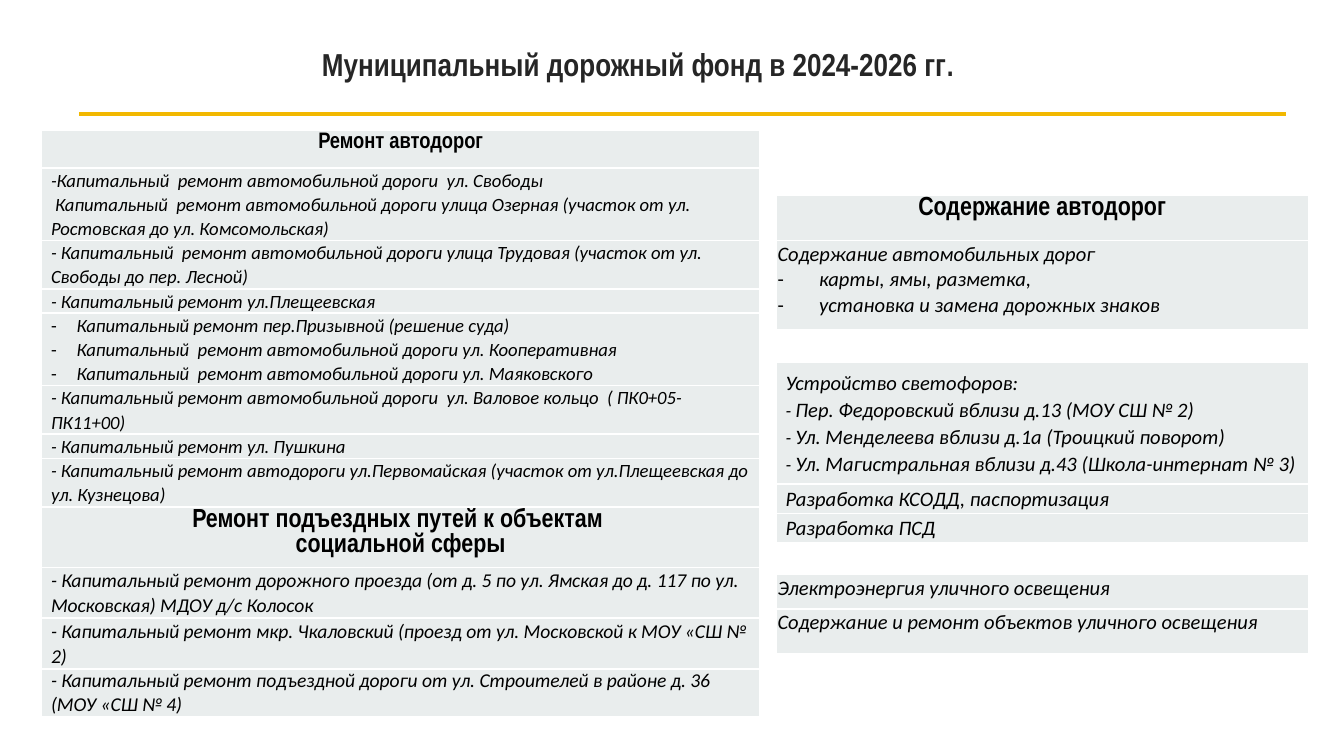
from dataclasses import dataclass

from lxml.etree import SubElement
from pptx import Presentation
from pptx.dml.color import RGBColor
from pptx.enum.shapes import MSO_CONNECTOR as Connector
from pptx.enum.text import MSO_ANCHOR as Anchor, MSO_AUTO_SIZE as AutoSize, PP_ALIGN as Align
from pptx.oxml.ns import qn
from pptx.util import Inches, Pt

WIDTH = 10
HEIGHT = WIDTH * 9 / 16
COLORS = {"title": "262626", "text": "000000", "rule": "F2B800",
          "cell": "E9EDED", "border": "FFFFFF"}
HEADING_FONT, LIST_FONT = "Arial Narrow", "Calibri"
TIGHT, WIDE = (0.01, 0.01, 0.01, 0), (0.07, 0, 0.07, 0)
LEFT_COLUMN, RIGHT_COLUMN = (3.1, 53.45), (57.75, 39.6)  # left and width, % of slide


@dataclass(frozen=True)
class Line:
    """One paragraph; a lead is a smaller run placed before the text."""
    text: str
    lead: str = ""
    hang: float = 0  # hanging indent of a dash bullet, inches


@dataclass(frozen=True)
class Row:
    height: float  # % of slide height
    lines: tuple[Line, ...]
    anchor: Anchor = Anchor.TOP
    insets: tuple[float, ...] = WIDE
    spacing: float = 1.07
    heading: float = 0  # heading size; 0 for a list row


@dataclass(frozen=True)
class Block:
    column: tuple[float, float]
    top: float
    size: float
    rows: tuple[Row, ...]


def across(share: float) -> int:
    return Inches(WIDTH * share / 100)


def down(share: float) -> int:
    return Inches(HEIGHT * share / 100)


def rgb(name: str) -> RGBColor:
    return RGBColor.from_string(COLORS[name])


def write(paragraph, text: str, *, size: float, font: str, color: str = "text",
          bold: bool = False, italic: bool = False, align: Align = Align.LEFT,
          spacing: float = 1.0) -> None:
    paragraph.alignment = align
    paragraph.line_spacing = spacing
    run = paragraph.add_run()
    run.text = text
    run.font.size, run.font.name = Pt(size), font
    run.font.bold, run.font.italic = bold, italic
    run.font.color.rgb = rgb(color)


def add_dash(paragraph, hang: float) -> None:
    properties = paragraph._p.get_or_add_pPr()
    properties.set("marL", str(Inches(hang)))
    properties.set("indent", str(-Inches(hang)))
    SubElement(properties, qn("a:buFont"), typeface=LIST_FONT)
    SubElement(properties, qn("a:buChar"), char="-")


def add_borders(cell) -> None:
    properties = cell._tc.get_or_add_tcPr()
    for side in "LRTB":
        border = SubElement(properties, qn(f"a:ln{side}"), w=str(Pt(1)))
        fill = SubElement(border, qn("a:solidFill"))
        SubElement(fill, qn("a:srgbClr"), val=COLORS["border"])


def fill_cell(cell, row: Row, size: float) -> None:
    add_borders(cell)
    cell.fill.solid()
    cell.fill.fore_color.rgb = rgb("cell")
    cell.vertical_anchor = row.anchor
    cell.margin_left, cell.margin_top, cell.margin_right, cell.margin_bottom = map(Inches, row.insets)
    for index, line in enumerate(row.lines):
        frame = cell.text_frame
        paragraph = frame.add_paragraph() if index else frame.paragraphs[0]
        if line.hang:
            add_dash(paragraph, line.hang)
        if row.heading:
            write(paragraph, line.text, size=row.heading, font=HEADING_FONT, bold=True,
                  align=Align.CENTER)
            continue
        if line.lead:
            write(paragraph, line.lead, size=size - 1, font=LIST_FONT, italic=True,
                  spacing=row.spacing)
        write(paragraph, line.text, size=size, font=LIST_FONT, italic=True, spacing=row.spacing)


def draw_block(slide, block: Block) -> None:
    left, width = block.column
    height = sum(row.height for row in block.rows)
    table = slide.shapes.add_table(len(block.rows), 1, across(left), down(block.top),
                                   across(width), down(height)).table
    table.first_row = table.horz_banding = False
    for index, row in enumerate(block.rows):
        table.rows[index].height = down(row.height)
        fill_cell(table.cell(index, 0), row, block.size)


def heading(height: float, size: float, *texts: str) -> Row:
    return Row(height, tuple(map(Line, texts)), insets=TIGHT, spacing=1, heading=size)


def item(height: float, *texts: str, anchor: Anchor = Anchor.MIDDLE, spacing: float = 1.07) -> Row:
    return Row(height, tuple(map(Line, texts)), anchor, spacing=spacing)


def tight(height: float, *lines: Line) -> Row:
    return Row(height, lines, insets=TIGHT, spacing=1)


LINE = 3.2  # height of one 10 pt list line
BOTTOM = Anchor.BOTTOM

BLOCKS = (
    # Road maintenance
    Block(RIGHT_COLUMN, 25.8, 11, (
        heading(6, 14, "Содержание автодорог"),
        tight(11.85, Line("Содержание автомобильных дорог"),
              Line("карты, ямы, разметка,", hang=0.31),
              Line("установка и замена дорожных знаков", hang=0.31)),
    )),
    # Road repair
    Block(LEFT_COLUMN, 17.25, 10, (
        heading(4.95, 12, "Ремонт автодорог"),
        item(3 * LINE, "-Капитальный  ремонт автомобильной дороги  ул. Свободы",
             " Капитальный  ремонт автомобильной дороги улица Озерная (участок от ул. "
             "Ростовская до ул. Комсомольская)", anchor=BOTTOM),
        item(2 * LINE, "- Капитальный  ремонт автомобильной дороги улица Трудовая "
             "(участок от ул. Свободы до пер. Лесной)", anchor=BOTTOM),
        item(LINE, "- Капитальный ремонт ул.Плещеевская", anchor=BOTTOM),
        Row(3 * LINE, (
            Line("Капитальный ремонт пер.Призывной (решение суда)", hang=0.19),
            Line("Капитальный  ремонт автомобильной дороги ул. Кооперативная", hang=0.19),
            Line("Капитальный  ремонт автомобильной дороги ул. Маяковского", hang=0.19))),
        item(2 * LINE, "- Капитальный ремонт автомобильной дороги  ул. Валовое кольцо  "
             "( ПК0+05-ПК11+00)"),
        item(LINE, "- Капитальный ремонт ул. Пушкина"),
        item(2 * LINE, "- Капитальный ремонт автодороги ул.Первомайская "
             "(участок от ул.Плещеевская до ул. Кузнецова)"),
    )),
    # Traffic lights and design work
    Block(RIGHT_COLUMN, 47.85, 11, (
        Row(16.2, (
            Line("Устройство светофоров:"),
            Line("Пер. Федоровский вблизи д.13 (МОУ СШ № 2)", lead="- "),
            Line("Ул. Менделеева вблизи д.1а (Троицкий поворот)", lead="- "),
            Line("Ул. Магистральная вблизи д.43 (Школа-интернат № 3)", lead="- ")),
            Anchor.MIDDLE),
        item(3.85, "Разработка КСОДД, паспортизация"),
        item(3.85, "Разработка ПСД"),
    )),
    # Access roads to social facilities
    Block(LEFT_COLUMN, 67.1, 10.5, (
        heading(7.95, 14, "Ремонт подъездных путей к объектам ", "социальной сферы"),
        item(6.7, "- Капитальный ремонт дорожного проезда (от д. 5 по ул. Ямская "
             "до д. 117 по ул. Московская) МДОУ д/с Колосок", anchor=BOTTOM),
        item(6.7, "- Капитальный ремонт мкр. Чкаловский (проезд от ул. Московской "
             "к МОУ «СШ № 2)", anchor=BOTTOM),
        item(6.2, "- Капитальный ремонт подъездной дороги от ул. Строителей "
             "в районе д. 36 (МОУ «СШ № 4)", anchor=BOTTOM, spacing=1),
    )),
    # Street lighting
    Block(RIGHT_COLUMN, 75.95, 11, (
        tight(4.6, Line("Электроэнергия уличного освещения")),
        tight(5.95, Line("Содержание и ремонт объектов уличного освещения")),
    )),
)


def draw_title(slide) -> None:
    title = slide.shapes.title
    title.left, title.top = across(23.25), down(2.5)
    title.width, title.height = across(63.8), down(12.63)
    frame = title.text_frame
    frame.auto_size, frame.word_wrap = AutoSize.NONE, True
    frame.vertical_anchor = Anchor.MIDDLE
    frame.margin_left = frame.margin_right = Inches(0.07)
    frame.margin_top = frame.margin_bottom = Inches(0.04)
    for text, size in (("Муниципальный дорожный фонд в 2024-2026 гг", 17), (".", 16)):
        write(frame.paragraphs[0], text, size=size, font=HEADING_FONT, color="title",
              bold=True, spacing=0.9)


def draw_rule(slide) -> None:
    rule = slide.shapes.add_connector(Connector.STRAIGHT, across(5.9), down(15.1),
                                      across(95.7), down(15.1))
    rule.line.color.rgb = rgb("rule")
    rule.line.width = Pt(2.25)
    SubElement(rule._element.spPr, qn("a:effectLst"))


def main() -> None:
    deck = Presentation()
    deck.slide_width, deck.slide_height = Inches(WIDTH), Inches(HEIGHT)
    slide = deck.slides.add_slide(deck.slide_layouts[5])
    draw_title(slide)
    draw_rule(slide)
    for block in BLOCKS:
        draw_block(slide, block)
    deck.save("out.pptx")


if __name__ == "__main__":
    main()
